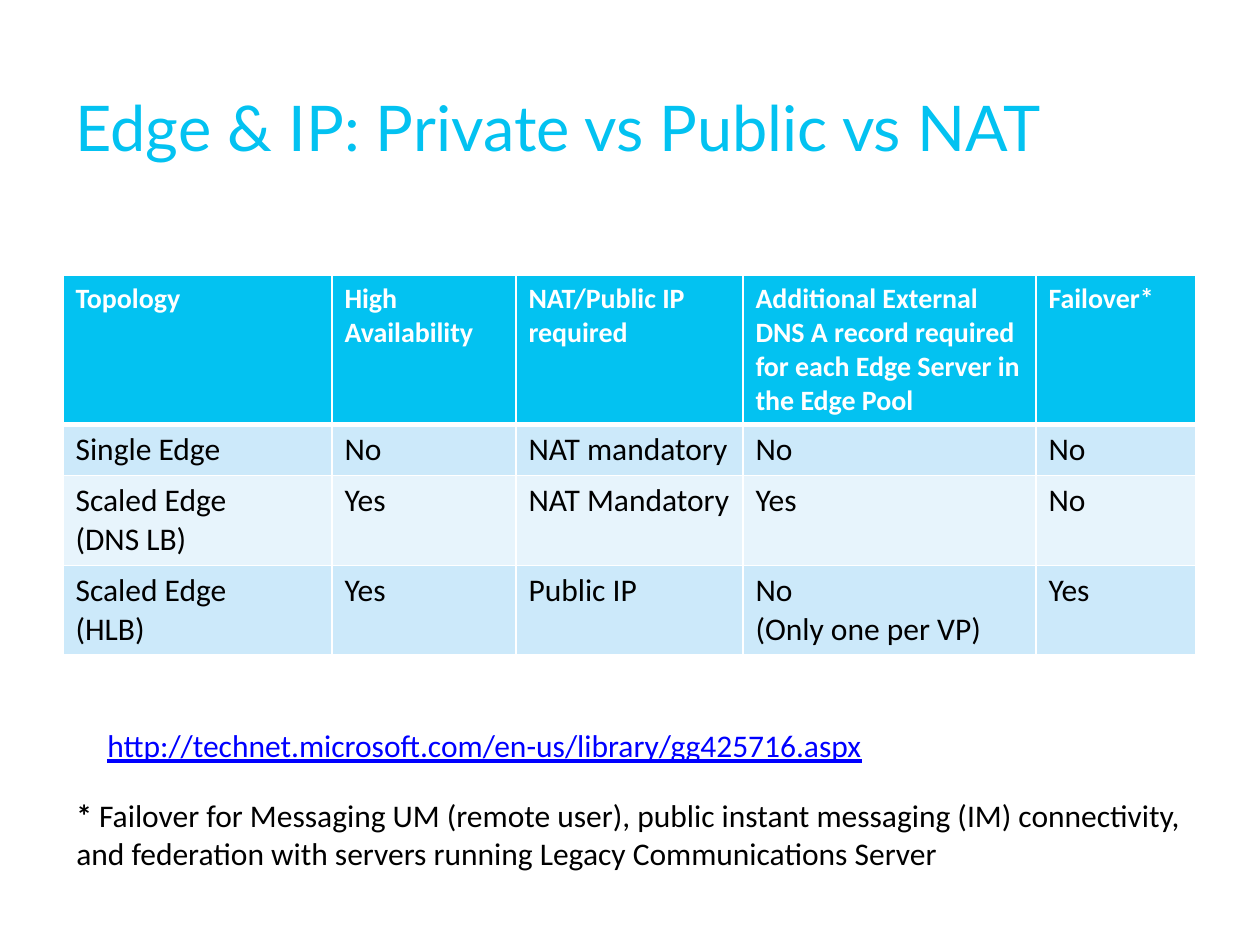
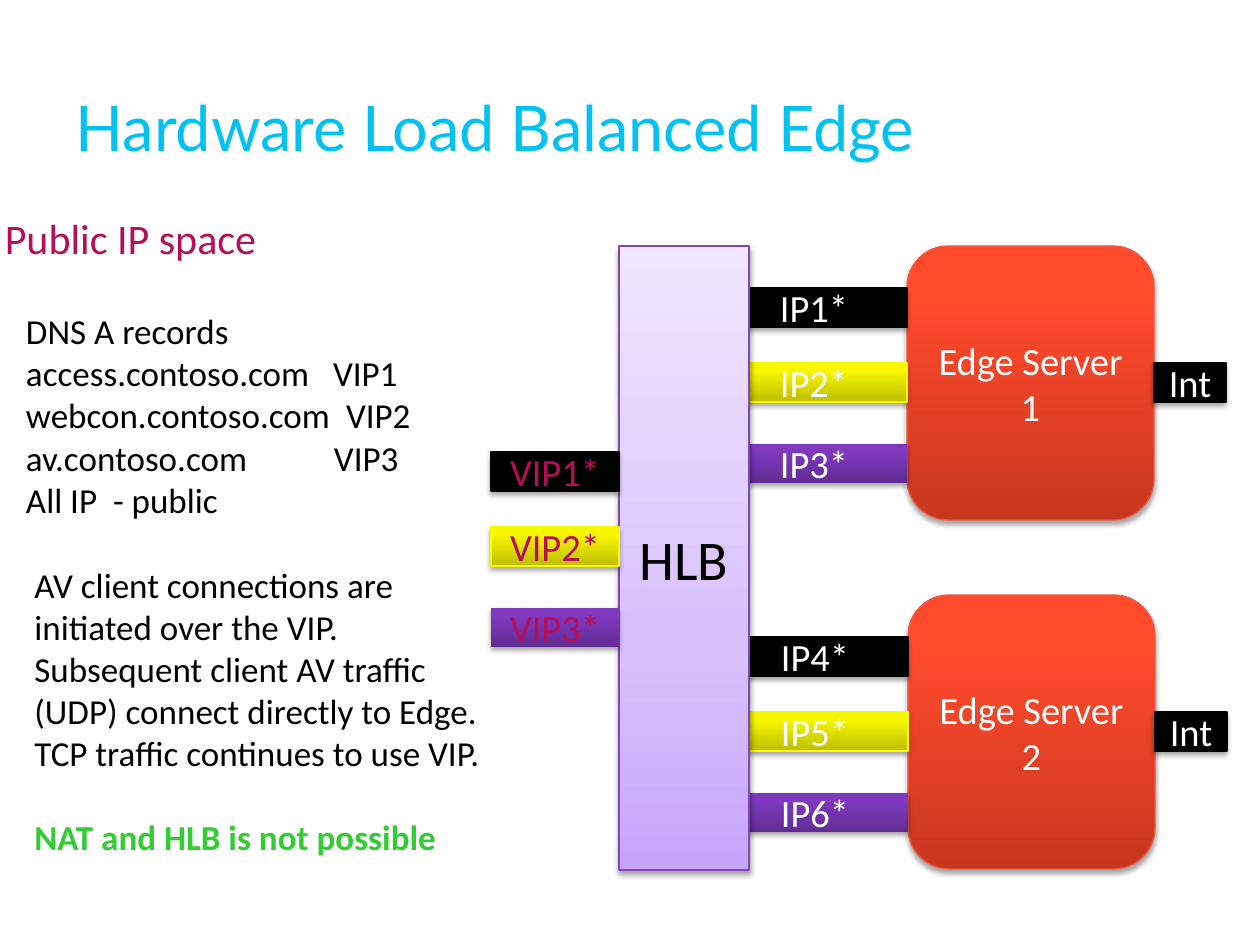
from lxml.etree import SubElement
from pptx import Presentation
from pptx.dml.color import RGBColor
from pptx.enum.shapes import MSO_SHAPE
from pptx.enum.text import MSO_ANCHOR, MSO_AUTO_SIZE, PP_ALIGN
from pptx.oxml.ns import qn
from pptx.util import Emu, Pt

# Colours and formats shared by the slides
CYAN = RGBColor(0x03, 0xC2, 0xF1)
PALE = RGBColor(0xCC, 0xE9, 0xFA)
PALER = RGBColor(0xE7, 0xF4, 0xFC)
WHITE = RGBColor(0xFF, 0xFF, 0xFF)
BLACK = RGBColor(0x00, 0x00, 0x00)
BLUE = RGBColor(0x00, 0x00, 0xFF)
MAGENTA = RGBColor(0xB6, 0x0E, 0x59)
GREEN = RGBColor(0x33, 0xCC, 0x33)
ORANGE_EDGE = RGBColor(0xF0, 0x57, 0x3E)
YELLOW_EDGE = RGBColor(0xF9, 0xF9, 0x00)
VIOLET_EDGE = RGBColor(0x7F, 0x47, 0xB4)

TITLE = dict(name="Lato", size=Pt(36), color=CYAN)
HEADER = dict(name="Calibri", size=Pt(16), bold=True, color=WHITE)
BODY = dict(name="Calibri", size=Pt(18), bold=False, color=BLACK)
LINK = dict(BODY, color=BLUE, underline=True)
HEADING = dict(BODY, size=Pt(24), color=MAGENTA)
NOTE = dict(BODY, size=Pt(20))
WARNING = dict(NOTE, bold=True, color=GREEN)
LABEL = dict(BODY, size=Pt(22), color=WHITE)
VIP_LABEL = dict(LABEL, color=MAGENTA)
HLB_LABEL = dict(BODY, size=Pt(32))

# Fill (one colour or gradient stops) and outline of each kind of block
SOLID = (BLACK, BLACK)
ORANGE = ([(0, "C7371F"), (80, "FF4A2C"), (100, "FF4B2E")], ORANGE_EDGE)
YELLOW = ([(0, "BEBE00"), (80, "F7F700"), (100, "F8F800")], YELLOW_EDGE)
PURPLE = ([(0, "612C93"), (80, "7F39BF"), (100, "7F37C2")], None)
LILAC = ([(0, "C8A5FB"), (35, "D8C0FB"), (100, "F0E6FE")], VIOLET_EDGE)

# Slide 1 content
TOPOLOGY = [
    ["Topology", "High Availability", "NAT/Public IP required",
     "Additional External DNS A record required for each Edge Server in the Edge Pool",
     "Failover*"],
    ["Single Edge", "No", "NAT mandatory", "No", "No"],
    ["Scaled Edge\n(DNS LB)", "Yes", "NAT Mandatory", "Yes", "No"],
    ["Scaled Edge\n(HLB)", "Yes", "Public IP", "No\n(Only one per VP)", "Yes"],
]
COLUMN_WIDTHS = [269, 184, 227, 293, 160]
ROW_HEIGHTS = [148, 51, 90, 89]
URL = "http://technet.microsoft.com/en-us/library/gg425716.aspx"
FOOTNOTE = (" Failover for Messaging UM (remote user), public instant messaging (IM) "
            "connectivity, and federation with servers running "
            "Legacy Communications Server")

# Slide 2 content: DNS lines with the tab stop of their second part
DNS_RECORDS = [
    ("DNS A records", None),
    ("access.contoso.com\tVIP1", 307),
    ("webcon.contoso.com\tVIP2", 320),
    ("av.contoso.com\tVIP3", 308),
    ("All IP\t- public", 87),
]
AV_NOTES = [
    "AV client connections are initiated over the VIP.",
    "Subsequent client AV traffic (UDP) connect directly to Edge.",
    "TCP traffic continues to use VIP.",
]
LANES = [(SOLID, 42), (YELLOW, 117), (PURPLE, 198)]  # style, drop from group top
SERVERS = [("Edge Server 1", 907, 246, ["IP1*", "IP2*", "IP3*"]),
           ("Edge Server 2", 908, 595, ["IP4*", "IP5*", "IP6*"])]
VIPS = ["VIP1*", "VIP2*", "VIP3*"]
LANE_H = 39


def px(n):
    return Emu(round(n * 914400 / 126))


def box(*lengths):
    return [px(n) for n in lengths]


def write(p, text, fmt):
    r = p.add_run()
    r.text = text
    for key, value in fmt.items():
        if key == "color":
            r.font.color.rgb = value
        else:
            setattr(r.font, key, value)


def paragraphs(tf, lines, fmt):
    for i, line in enumerate(lines):
        p = tf.add_paragraph() if i else tf.paragraphs[0]
        write(p, line, fmt)
    return tf.paragraphs


def text_box(s, at, inset=True):
    tf = s.shapes.add_textbox(*box(*at)).text_frame
    tf.word_wrap = True
    if not inset:
        for side in ("left", "top", "right", "bottom"):
            setattr(tf, f"margin_{side}", 0)
    return tf


def titled_slide(prs, title):
    s = prs.slides.add_slide(prs.slide_layouts[5])
    sp = s.shapes.title
    sp.left, sp.top, sp.width, sp.height = box(63, 47, 1134, 158)
    tf = sp.text_frame
    tf.auto_size = MSO_AUTO_SIZE.NONE
    tf.vertical_anchor = MSO_ANCHOR.MIDDLE
    tf.paragraphs[0].alignment = PP_ALIGN.LEFT
    write(tf.paragraphs[0], title, TITLE)
    return s


def color_node(parent, rgb):
    return SubElement(parent, qn("a:srgbClr"), val=str(rgb))


def block(s, at, text, style, fmt=LABEL, kind=MSO_SHAPE.RECTANGLE):
    fill, edge = style
    sp = s.shapes.add_shape(kind, *box(*at))
    if isinstance(fill, list):
        sp.fill.gradient()
        sp.fill.gradient_angle = 90
        stops = sp._element.spPr.find(".//" + qn("a:gsLst"))
        for old in list(stops):
            stops.remove(old)
        for pos, rgb in fill:
            color_node(SubElement(stops, qn("a:gs"), pos=str(pos * 1000)), rgb)
    else:
        sp.fill.solid()
        sp.fill.fore_color.rgb = fill
    if edge is None:
        sp.line.fill.background()
    else:
        sp.line.color.rgb = edge
        sp.line.width = Pt(0.75)
    # Soft shadow straight below
    sp.shadow.inherit = False
    effects = sp._element.spPr.find(qn("a:effectLst"))
    shadow = SubElement(effects, qn("a:outerShdw"), blurRad=str(Pt(3.1)),
                        dist=str(Pt(1.8)), dir="5400000", rotWithShape="0")
    SubElement(color_node(shadow, BLACK), qn("a:alpha"), val="35000")
    tf = sp.text_frame
    tf.word_wrap = True
    tf.vertical_anchor = MSO_ANCHOR.MIDDLE
    tf.paragraphs[0].alignment = PP_ALIGN.CENTER
    write(tf.paragraphs[0], text, fmt)


def lanes(s, x, top, width, labels, fmt=LABEL):
    for label, (style, drop) in zip(labels, LANES):
        block(s, (x, top + drop, width, LANE_H), label, style, fmt)


def cell_borders(cell, bottom):
    tc_pr = cell._tc.get_or_add_tcPr()
    for i, (side, width) in enumerate([("L", 1), ("R", 1), ("T", 1), ("B", bottom)]):
        ln = tc_pr.makeelement(qn("a:ln" + side), {"w": str(Pt(width))})
        color_node(SubElement(ln, qn("a:solidFill")), WHITE)
        tc_pr.insert(i, ln)


def topology_slide(prs):
    s = titled_slide(prs, "Edge & IP: Private vs Public vs NAT")
    # Table
    table = s.shapes.add_table(len(TOPOLOGY), len(COLUMN_WIDTHS),
                               *box(63, 275, sum(COLUMN_WIDTHS), sum(ROW_HEIGHTS))).table
    for column, width in zip(table.columns, COLUMN_WIDTHS):
        column.width = px(width)
    for r, (row, height) in enumerate(zip(TOPOLOGY, ROW_HEIGHTS)):
        table.rows[r].height = px(height)
        for c, text in enumerate(row):
            cell = table.cell(r, c)
            cell.fill.solid()
            cell.fill.fore_color.rgb = CYAN if r == 0 else (PALER, PALE)[r % 2]
            cell_borders(cell, 1 if r else 3)
            paragraphs(cell.text_frame, text.split("\n"), BODY if r else HEADER)
    # Source and footnote
    paragraphs(text_box(s, (95, 720, 953, 50)), [URL], LINK)
    p = text_box(s, (64, 790, 1171, 89)).paragraphs[0]
    write(p, "*", dict(BODY, bold=True))
    write(p, FOOTNOTE, BODY)


def hlb_slide(prs):
    s = titled_slide(prs, "Hardware Load Balanced Edge")
    # Edge servers with their external and internal addresses
    for name, x, top, addresses in SERVERS:
        block(s, (x, top, 247, 274), name, ORANGE, kind=MSO_SHAPE.ROUNDED_RECTANGLE)
        lanes(s, x - 186, top, 186, addresses)
        block(s, (x + 247, top + 117, 72, LANE_H), "Int", SOLID)
    # Load balancer and its virtual addresses
    block(s, (619, 246, 130, 624), "HLB", LILAC, HLB_LABEL)
    lanes(s, 491, 410, 128, VIPS, VIP_LABEL)
    # DNS records
    heading = text_box(s, (0, 213, 261, 50), inset=False)
    heading.paragraphs[0].alignment = PP_ALIGN.CENTER
    paragraphs(heading, ["Public IP space"], HEADING)
    dns = text_box(s, (26, 310, 450, 254), inset=False)
    records = paragraphs(dns, [text for text, _ in DNS_RECORDS], NOTE)
    for p, (_, stop) in zip(records, DNS_RECORDS):
        if stop:
            tabs = SubElement(p._p.get_or_add_pPr(), qn("a:tabLst"))
            SubElement(tabs, qn("a:tab"), pos=str(px(stop)), algn="l")
    # Notes on client traffic
    tf = text_box(s, (22, 557, 498, 351))
    paragraphs(tf, AV_NOTES, NOTE)
    p = tf.add_paragraph()
    p.space_before = Pt(24)
    write(p, "NAT and HLB is not possible", WARNING)


def main():
    prs = Presentation()
    prs.slide_width, prs.slide_height = box(1260, 945)
    topology_slide(prs)
    hlb_slide(prs)
    prs.save("out.pptx")


if __name__ == "__main__":
    main()
